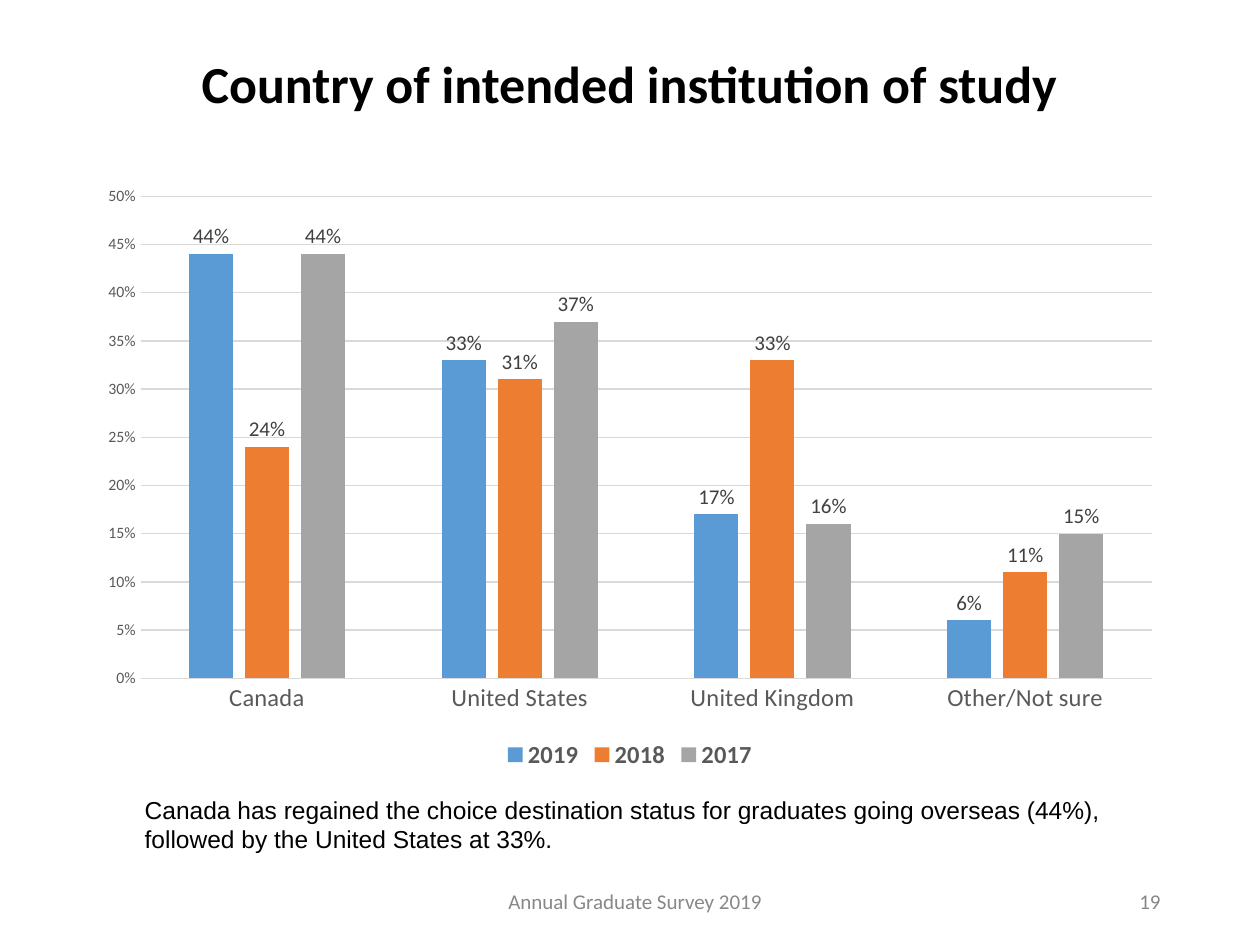
from lxml import etree
from pptx import Presentation
from pptx.chart.data import CategoryChartData
from pptx.dml.color import RGBColor
from pptx.enum.chart import XL_CHART_TYPE, XL_LABEL_POSITION, XL_LEGEND_POSITION, XL_TICK_MARK
from pptx.enum.text import MSO_ANCHOR, MSO_AUTO_SIZE, PP_ALIGN
from pptx.oxml.ns import qn
from pptx.util import Pt

COLORS = {
    "text": "000000", "footer": "888888", "axis": "595959",
    "label": "404040", "grid": "D9D9D9",
    "2019": "5B9BD5", "2018": "ED7D31", "2017": "A5A5A5",
}


def set_font(font, size, color, name="Calibri", bold=False):
    values = {"size": Pt(size), "name": name, "bold": bold}
    for attribute, value in values.items():
        setattr(font, attribute, value)
    font.color.rgb = RGBColor.from_string(COLORS[color])


def set_text(shape, text, align, anchor, size, color, name="Calibri", bold=False):
    frame = shape.text_frame
    values = {"text": text, "word_wrap": True, "auto_size": MSO_AUTO_SIZE.NONE,
              "vertical_anchor": anchor}
    for attribute, value in values.items():
        setattr(frame, attribute, value)
    paragraph = frame.paragraphs[0]
    paragraph.alignment = align
    set_font(paragraph.runs[0].font, size, color, name, bold)
    return paragraph


presentation = Presentation()
presentation.slide_width, presentation.slide_height = Pt(720), Pt(540)
slide = presentation.slides.add_slide(presentation.slide_layouts[5])

# Title
title = slide.shapes.title
placement = {"left": 49.5, "top": 28.8, "width": 621, "height": 41.8}
for attribute, value in placement.items():
    setattr(title, attribute, Pt(value))
title_paragraph = set_text(title, "Country of intended institution of study",
                           PP_ALIGN.CENTER, MSO_ANCHOR.MIDDLE, 29.7, "text", bold=True)
title_paragraph.line_spacing = 0.9

# Commentary, footer and slide number
texts = [
    ("Canada has regained the choice destination status for graduates going overseas (44%), "
     "followed by the United States at 33%.",
     (75.6, 450.7, 585.4, 41), PP_ALIGN.LEFT, MSO_ANCHOR.TOP, 14, "text", "Arial"),
    ("Annual Graduate Survey 2019",
     (241.2, 500.4, 243.4, 28.8), PP_ALIGN.CENTER, MSO_ANCHOR.MIDDLE, 12, "footer", "Calibri"),
    ("19",
     (508.3, 500.4, 162, 28.8), PP_ALIGN.RIGHT, MSO_ANCHOR.MIDDLE, 12, "footer", "Calibri"),
]
for text, box, *text_format in texts:
    text_box = slide.shapes.add_textbox(*map(Pt, box))
    set_text(text_box, text, *text_format)

# Chart data
chart_data = CategoryChartData(number_format="0%")
chart_data.categories = ["Canada", "United States", "United Kingdom", "Other/Not sure"]
shares = {
    "2019": (0.44, 0.33, 0.17, 0.06),
    "2018": (0.24, 0.31, 0.33, 0.11),
    "2017": (0.44, 0.37, 0.16, 0.15),
}
for year, values in shares.items():
    chart_data.add_series(year, values)
chart = slide.shapes.add_chart(XL_CHART_TYPE.COLUMN_CLUSTERED, Pt(49.5), Pt(100.1),
                               Pt(621), Pt(342.7), chart_data).chart
chart.has_title = False
auto_title = chart._chartSpace.chart.find(qn("c:autoTitleDeleted"))
if auto_title is None:
    auto_title = etree.SubElement(chart._chartSpace.chart, qn("c:autoTitleDeleted"))
    chart._chartSpace.chart.insert(0, auto_title)
auto_title.set("val", "1")
set_font(chart.font, 10, "text")

# Columns and their labels
plot = chart.plots[0]
for attribute, value in {"gap_width": 219, "overlap": -27, "vary_by_categories": False}.items():
    setattr(plot, attribute, value)
for series in plot.series:
    series.format.fill.solid()
    series.format.fill.fore_color.rgb = RGBColor.from_string(COLORS[series.name])
    series.invert_if_negative = False
    labels = series.data_labels
    label_format = {"show_value": True, "number_format": "0%",
                    "number_format_is_linked": False,
                    "position": XL_LABEL_POSITION.OUTSIDE_END}
    for attribute, value in label_format.items():
        setattr(labels, attribute, value)
    set_font(labels.font, 12, "label")

# Axes
category_axis, value_axis = chart.category_axis, chart.value_axis
for axis, size in ((category_axis, 14), (value_axis, 9)):
    axis.major_tick_mark = axis.minor_tick_mark = XL_TICK_MARK.NONE
    set_font(axis.tick_labels.font, size, "axis")
value_format = {"minimum_scale": 0, "maximum_scale": 0.5, "major_unit": 0.05,
                "has_major_gridlines": True}
for attribute, value in value_format.items():
    setattr(value_axis, attribute, value)
value_axis.tick_labels.number_format = "0%"
value_axis.tick_labels.number_format_is_linked = False
value_axis.format.line.fill.background()
for line in (category_axis.format.line, value_axis.major_gridlines.format.line):
    line.width = Pt(0.75)
    line.color.rgb = RGBColor.from_string(COLORS["grid"])

# Legend
chart.has_legend = True
chart.legend.position = XL_LEGEND_POSITION.BOTTOM
chart.legend.include_in_layout = False
set_font(chart.legend.font, 14, "axis", bold=True)

presentation.save("out.pptx")
